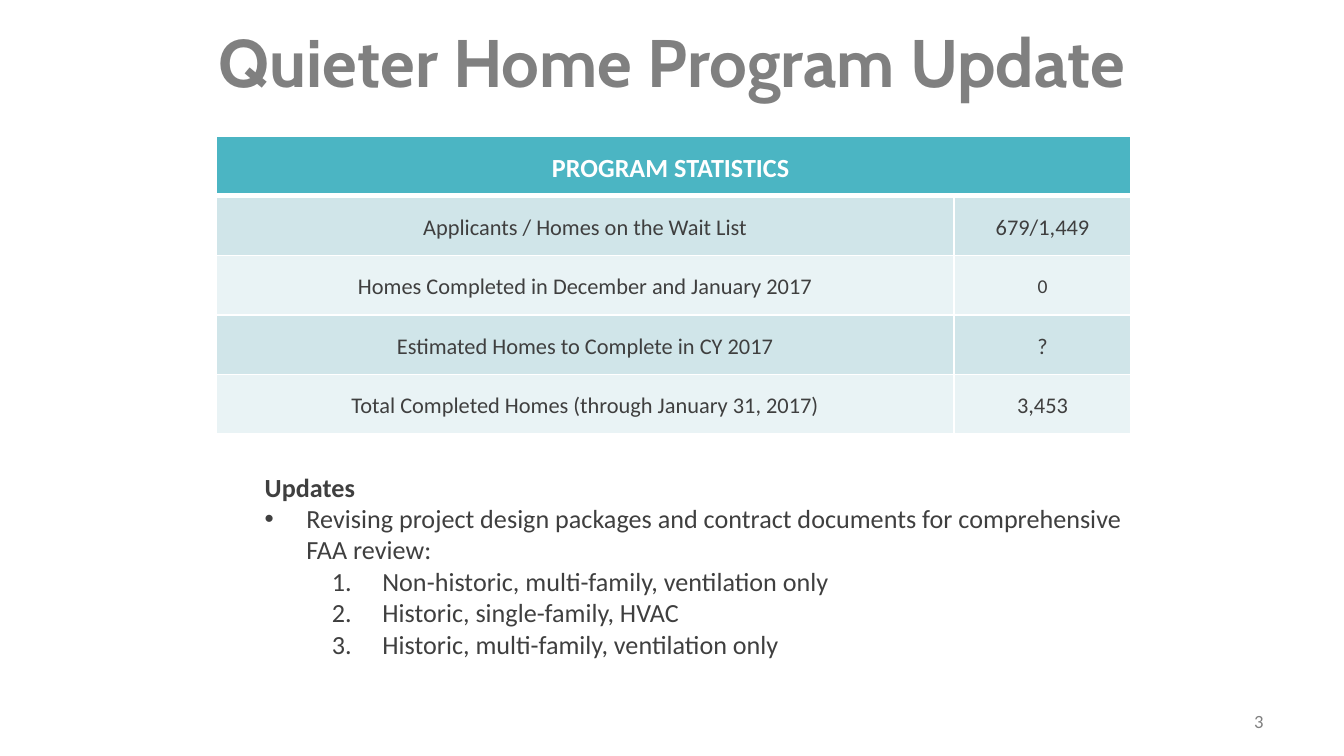
import lxml.etree
import pptx
import pptx.dml.color
import pptx.enum.text
import pptx.oxml.ns
import pptx.util

PX = 4572
COLORS = {"title": "808080", "text": "3F3F3F", "header": "4BB5C3",
          "band": "D0E5E9", "light": "E9F3F5", "white": "FFFFFF"}
ALIGN = pptx.enum.text.PP_ALIGN
MIDDLE = pptx.enum.text.MSO_ANCHOR.MIDDLE
STATISTICS = [
    ("Applicants / Homes on the Wait List", "679/1,449"),
    ("Homes Completed in December and January 2017", "0"),
    ("Estimated Homes to Complete in CY 2017", "?"),
    ("Total Completed Homes (through January 31, 2017)", "3,453"),
]
BULLET = {"level": 0, "margin": 62, "indent": -62, "tag": "a:buChar", "mark": {"char": "•"}}
NUMBER = {"level": 1, "margin": 175, "indent": -75, "tag": "a:buAutoNum",
          "mark": {"type": "arabicPeriod"}}
UPDATES = [
    ("Updates", None),
    ("Revising project design packages and contract documents for comprehensive FAA review:",
     BULLET),
    ("Non-historic, multi-family, ventilation only", NUMBER),
    ("Historic, single-family, HVAC", NUMBER),
    ("Historic, multi-family, ventilation only", NUMBER),
]


def px(*lengths):
    """Turn px lengths into a list of EMU."""
    return [pptx.util.Emu(length * PX) for length in lengths]


def set_values(target, values):
    """Set each attribute of the target from a dict."""
    for name, value in values.items():
        setattr(target, name, value)


def add_element(parent, tag, **attributes):
    """Append an XML element with a prefixed tag."""
    return lxml.etree.SubElement(parent, pptx.oxml.ns.qn(tag), attributes)


def write(para, text, size, color, bold=False, font="Calibri", **layout):
    """Write one formatted span into a paragraph."""
    set_values(para, layout)
    span = para.add_run()
    span.text = text
    set_values(span.font, {"name": font, "size": pptx.util.Pt(size), "bold": bold})
    span.font.color.rgb = pptx.dml.color.RGBColor.from_string(COLORS[color])


def add_title(page, box):
    """Place the page title in its placeholder."""
    title = page.shapes.title
    set_values(title, dict(zip(("left", "top", "width", "height"), px(*box))))
    set_values(title.text_frame, {"vertical_anchor": MIDDLE, "word_wrap": True})
    write(title.text_frame.paragraphs[0], "Quieter Home Program Update", 36, "title",
          True, "Cabin", alignment=ALIGN.CENTER)


def add_text_box(page, box, **frame_format):
    """Add a wrapping text box and return its frame."""
    frame = page.shapes.add_textbox(*px(*box)).text_frame
    set_values(frame, {"word_wrap": True, **frame_format})
    return frame


def fill_cell(cell, text, size, fill, color="text", bold=False, bottom=1):
    """Format a table cell with white borders, a fill and centred text."""
    properties = cell._tc.get_or_add_tcPr()
    for side, width in {"L": 1, "R": 1, "T": 1, "B": bottom}.items():
        line = add_element(properties, f"a:ln{side}", w=str(pptx.util.Pt(width)))
        add_element(add_element(line, "a:solidFill"), "a:srgbClr", val=COLORS["white"])
    cell.fill.solid()
    cell.fill.fore_color.rgb = pptx.dml.color.RGBColor.from_string(COLORS[fill])
    set_values(cell, {"vertical_anchor": MIDDLE, "margin_top": 0, "margin_bottom": 0})
    if text:
        write(cell.text_frame.paragraphs[0], text, size, color, bold,
              alignment=ALIGN.CENTER, line_spacing=1.15,
              space_before=pptx.util.Pt(5), space_after=pptx.util.Pt(5))


def add_statistics(page, box):
    """Add the table of program statistics."""
    table = page.shapes.add_table(len(STATISTICS) + 1, 2, *px(*box)).table
    value_width = 263
    for column, width in zip(table.columns, px(box[2] - value_width, value_width)):
        column.width = width
    table.cell(0, 0).merge(table.cell(0, 1))
    for column, text in enumerate(("PROGRAM STATISTICS ", "")):
        fill_cell(table.cell(0, column), text, 14, "header", "white", True, bottom=3)
    for row, texts in enumerate(STATISTICS, 1):
        for column, text in enumerate(texts):
            fill_cell(table.cell(row, column), text, 10.5 if text == "0" else 12,
                      "band" if row % 2 else "light")


def add_updates(page, box):
    """Add the heading with its bulleted and numbered updates."""
    side, edge = px(10, 6)
    frame = add_text_box(page, box, margin_left=side, margin_right=side,
                         margin_top=edge, margin_bottom=edge)
    for index, (text, marker) in enumerate(UPDATES):
        para = frame.add_paragraph() if index else frame.paragraphs[0]
        write(para, text, 14, "text", marker is None)
        if marker:
            para.level = marker["level"]
            properties = para._p.get_or_add_pPr()
            margin, indent = px(marker["margin"], marker["indent"])
            properties.set("marL", str(margin))
            properties.set("indent", str(indent))
            add_element(properties, "a:buFont", typeface="Arial" if marker is BULLET else "+mj-lt")
            add_element(properties, marker["tag"], **marker["mark"])


def add_page_number(page, box):
    """Add the page number at the right edge of its box."""
    frame = add_text_box(page, box, vertical_anchor=MIDDLE)
    write(frame.paragraphs[0], "3", 10, "title", alignment=ALIGN.RIGHT)


def main():
    """Build and save the deck."""
    deck = pptx.Presentation()
    deck.slide_width, deck.slide_height = px(2000, 1125)
    page = deck.slides.add_slide(deck.slide_layouts.get_by_name("Title Only"))
    add_updates(page, (384, 695, 1334, 434))
    add_title(page, (0, -4, 2000, 188))
    add_page_number(page, (1434, 1043, 466, 60))
    add_statistics(page, (322, 203, 1361, 443))
    deck.save("out.pptx")


if __name__ == "__main__":
    main()
